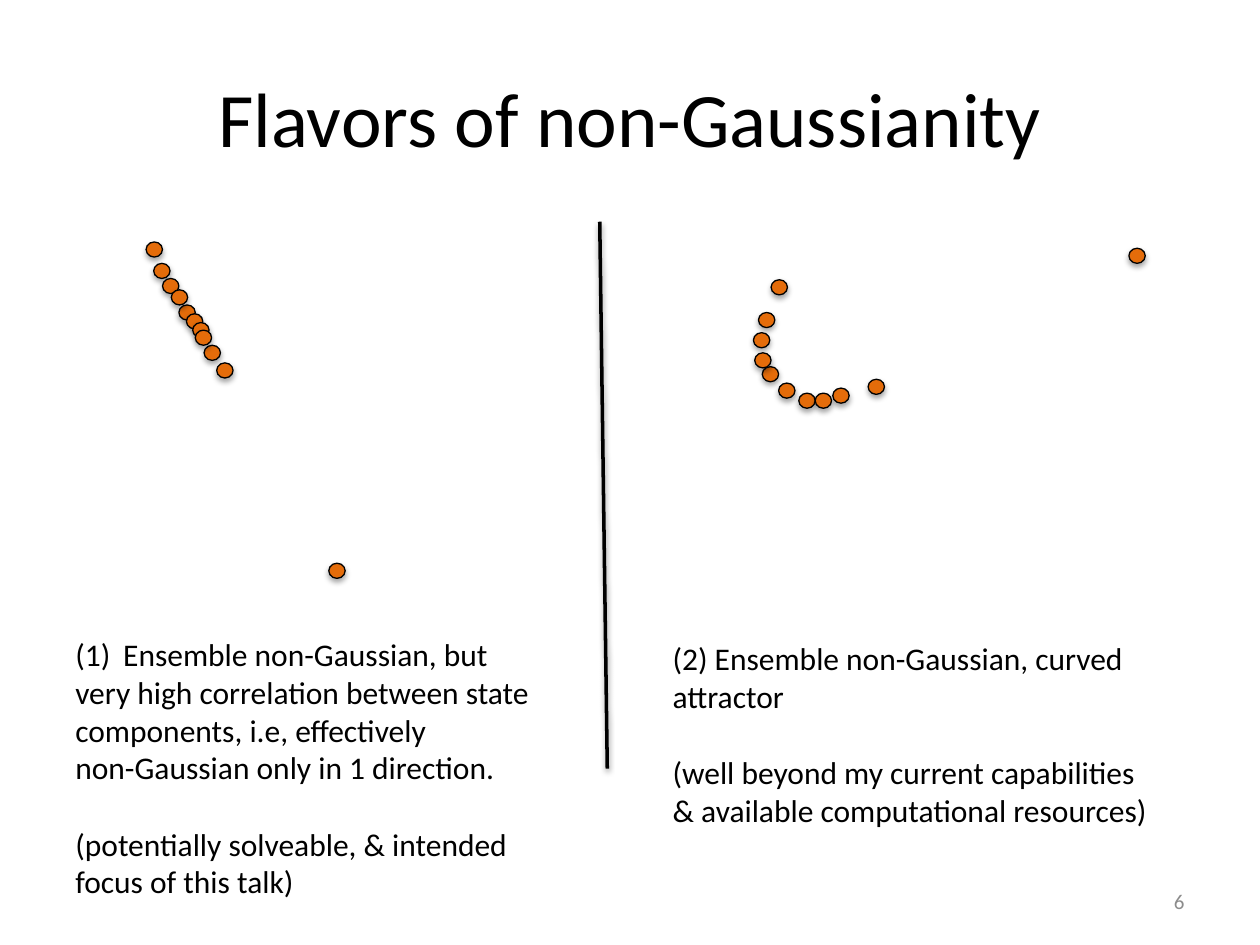
from lxml import etree
from pptx import Presentation
from pptx.dml.color import RGBColor
from pptx.enum.shapes import MSO_CONNECTOR, MSO_SHAPE
from pptx.enum.text import MSO_ANCHOR, PP_ALIGN
from pptx.oxml.ns import qn
from pptx.util import Inches, Pt

OVAL = MSO_SHAPE.OVAL
STRAIGHT = MSO_CONNECTOR.STRAIGHT
TOP, MIDDLE = MSO_ANCHOR.TOP, MSO_ANCHOR.MIDDLE
LEFT, CENTER, RIGHT = PP_ALIGN.LEFT, PP_ALIGN.CENTER, PP_ALIGN.RIGHT

CELL = 0.01  # grid step of the scatter panels, in inches
DOT_WIDTH, DOT_HEIGHT = 0.13, 0.12
LINE_PITCH = 22  # points, one line of 18 pt text

# Dots as (column, row) of the panel's grid, from back to front
STRAIGHT_ENSEMBLE = [
    (161, 272), (22, 34), (29, 46), (42, 67), (62, 99), (48, 74),
    (53, 81), (36, 55), (55, 87), (72, 113), (16, 17),
]
CURVED_ENSEMBLE = [
    (346, 22), (52, 73), (48, 89), (55, 116), (111, 133), (68, 129),
    (84, 137), (49, 105), (97, 137), (139, 126), (62, 47),
]

# Each caption is a list of blocks, with one free line between blocks
STRAIGHT_CAPTION = [
    ["Ensemble non-Gaussian, but", "very high correlation between state",
     "components, i.e, effectively", "non-Gaussian only in 1 direction."],
    ["(potentially solveable, & intended", "focus of this talk)"],
]
CURVED_CAPTION = [
    ["(2) Ensemble non-Gaussian, curved", "attractor"],
    ["(well beyond my current capabilities", "& available computational resources)"],
]


def color(value):
    return RGBColor.from_string(value)


def add_shadow(shape, opacity, distance):
    """Give the shape a soft black shadow straight below it."""
    effects = etree.SubElement(shape._element.spPr, qn("a:effectLst"))
    shadow = etree.SubElement(
        effects, qn("a:outerShdw"), blurRad=str(Pt(3.1)), dist=str(Pt(distance)),
        dir="5400000", rotWithShape="0")
    black = etree.SubElement(shadow, qn("a:srgbClr"), val="000000")
    etree.SubElement(black, qn("a:alpha"), val=str(opacity * 1000))


def add_text(page, box, lines, size, align=LEFT, anchor=TOP, wrap=True, ink="000000"):
    frame = page.shapes.add_textbox(*map(Inches, box)).text_frame
    frame.word_wrap = wrap
    frame.vertical_anchor = anchor
    frame.text = "\n".join(lines)
    for para in frame.paragraphs:
        para.alignment = align
        font = para.runs[0].font
        font.name, font.size = "Calibri", Pt(size)
        font.color.rgb = color(ink)
    return frame


def add_ensemble(page, left, top, dots):
    for column, row in dots:
        dot = page.shapes.add_shape(
            OVAL, Inches(left + column * CELL), Inches(top + row * CELL),
            Inches(DOT_WIDTH), Inches(DOT_HEIGHT))
        dot.fill.solid()
        dot.fill.fore_color.rgb = color("E46C0A")
        dot.line.color.rgb = color("000000")
        dot.line.width = Pt(0.75)
        add_shadow(dot, 35, 1.8)


def add_caption(page, box, blocks):
    lines = [line for block in blocks for line in block]
    frame = add_text(page, box, lines, 18, wrap=False)
    frame.paragraphs[len(blocks[0])].space_before = Pt(LINE_PITCH)
    return frame


def number_paragraph(para):
    """Number the paragraph as (1) with a hanging indent."""
    properties = para._p.get_or_add_pPr()
    properties.set("marL", str(Inches(0.38)))
    properties.set("indent", str(Inches(-0.38)))
    etree.SubElement(properties, qn("a:buFont"), typeface="+mj-lt")
    etree.SubElement(properties, qn("a:buAutoNum"), type="arabicParenBoth")


def add_divider(page, start, end):
    divider = page.shapes.add_connector(STRAIGHT, *map(Inches, start + end))
    divider.line.color.rgb = color("000000")
    divider.line.width = Pt(2)
    add_shadow(divider, 38, 1.6)


def main():
    deck = Presentation()
    deck.slide_width, deck.slide_height = Inches(10), Inches(7.5)
    page = deck.slides.add_slide(deck.slide_layouts[6])

    add_text(page, (0.5, 0.3, 9, 1.25), ["Flavors of non-Gaussianity"], 44, CENTER, MIDDLE)
    add_ensemble(page, 1, 1.75, STRAIGHT_ENSEMBLE)
    add_ensemble(page, 5.5, 1.75, CURVED_ENSEMBLE)
    add_divider(page, (4.76, 1.76), (4.82, 6.1))

    caption = add_caption(page, (0.5, 4.99, 3.86, 2.22), STRAIGHT_CAPTION)
    number_paragraph(caption.paragraphs[0])
    add_caption(page, (5.24, 5.02, 4.03, 1.62), CURVED_CAPTION)
    add_text(page, (7.17, 6.95, 2.33, 0.4), ["6"], 12, RIGHT, MIDDLE, ink="8C8C8C")

    deck.save("out.pptx")


if __name__ == "__main__":
    main()
